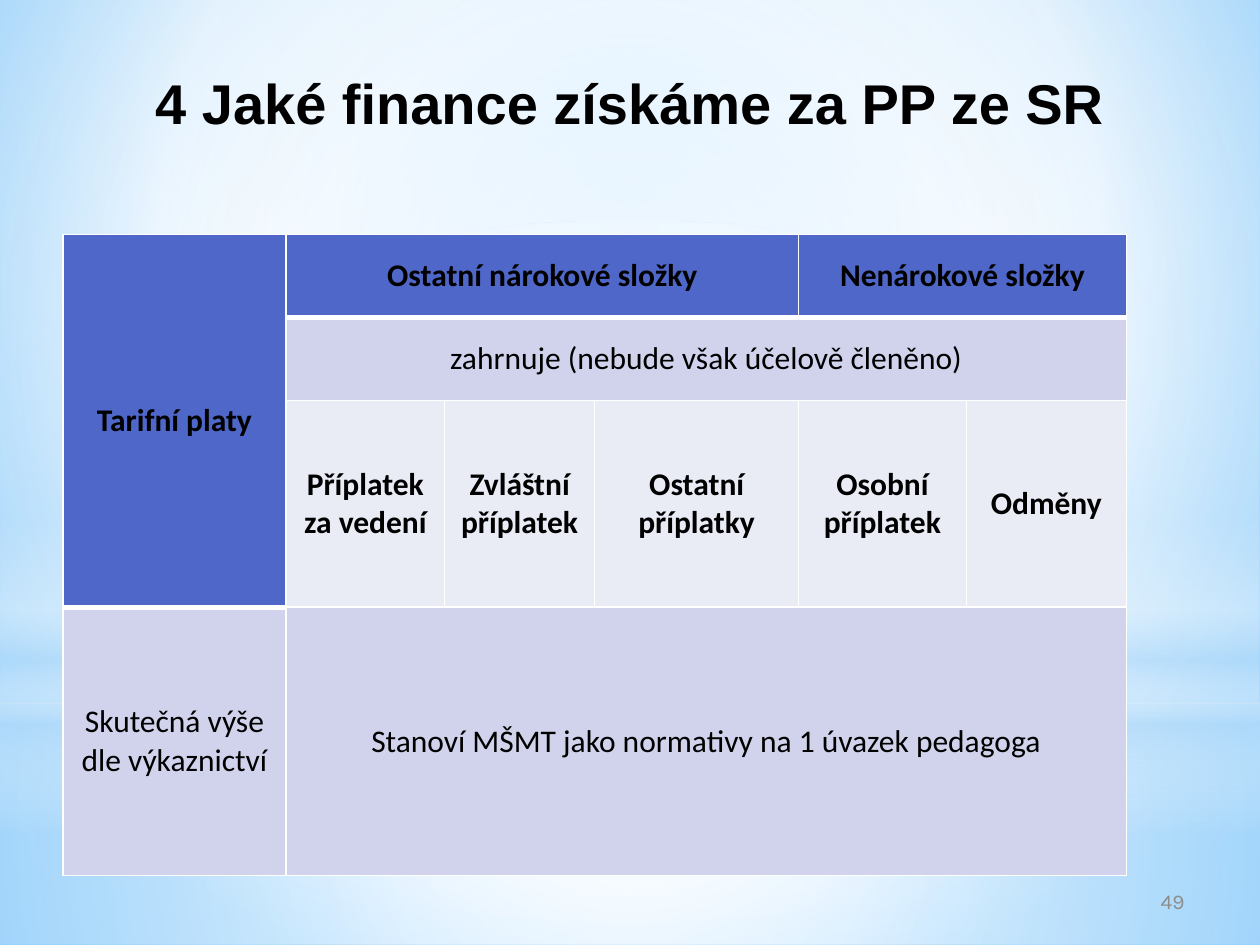
from lxml.etree import SubElement
from pptx import Presentation
from pptx.dml.color import RGBColor
from pptx.enum.shapes import MSO_SHAPE
from pptx.enum.text import MSO_ANCHOR, MSO_AUTO_SIZE, PP_ALIGN
from pptx.oxml.ns import qn
from pptx.util import Inches, Pt

COLUMN_WIDTHS = (1.77, 1.26, 1.19, 1.62, 1.33, 1.27)
ROW_HEIGHTS = (0.66, 0.66, 1.64, 2.13)
HEADER, BAND, LIGHT = "4E67C8", "D0D3EB", "E9EBF5"
CELLS = (
    (0, 0, 3, 1, "Tarifní platy", HEADER, True),
    (0, 1, 1, 3, "Ostatní nárokové složky", HEADER, True),
    (0, 4, 1, 2, "Nenárokové složky", HEADER, True),
    (1, 1, 1, 5, "zahrnuje (nebude však účelově členěno)", BAND, False),
    (2, 1, 1, 1, "Příplatek za vedení", LIGHT, True),
    (2, 2, 1, 1, "Zvláštní příplatek", LIGHT, True),
    (2, 3, 1, 1, "Ostatní příplatky", LIGHT, True),
    (2, 4, 1, 1, "Osobní příplatek", LIGHT, True),
    (2, 5, 1, 1, "Odměny", LIGHT, True),
    (3, 0, 1, 1, "Skutečná výše dle výkaznictví", BAND, False),
    (3, 1, 1, 5, "Stanoví MŠMT jako normativy na 1 úvazek pedagoga", BAND, False),
)
GLOWS = (
    (MSO_SHAPE.RECTANGLE, (0, 5.58, 10, 1.92), (50, 50, 50, 50),
     ((0, "FFFFFF", 91), (37, "FFFFFF", 76), (100, "B4DCFA", 79))),
    (MSO_SHAPE.RECTANGLE, (0, 0, 10, 5.58), (50, 50, 50, 50),
     ((0, "FFFFFF", 89), (48, "FFFFFF", 62), (100, "B4DCFA", 79))),
    (MSO_SHAPE.RECTANGLE, (0, 4.12, 10, 2.5), None,
     ((0, "FFFFFF", 0), (29, "FFFFFF", 30), (45, "B4DCFA", 40),
      (55, "FFFFFF", 26), (65, "B4DCFA", 60), (100, "FFFFFF", 0))),
    (MSO_SHAPE.OVAL, (0, 1.75, 10, 5.58), (50, 50, 50, 50),
     ((0, "FFFFFF", 100), (56, "FFFFFF", 0))),
)


def color(value):
    """Turn a hex string into a colour."""
    return RGBColor.from_string(value)


def style_text(paragraph, font_name, size, ink, align, bold=False):
    """Set the font and alignment of a paragraph."""
    paragraph.alignment = align
    font = paragraph.font
    font.name, font.size, font.bold = font_name, Pt(size), bold
    font.color.rgb = color(ink)


def set_gradient(fill, stops, focus=None):
    """Fill with a circular gradient around a focus, or a downward one."""
    fill.gradient()
    gradient = fill._fill._gradFill
    for child in list(gradient):
        gradient.remove(child)
    stop_list = SubElement(gradient, qn("a:gsLst"))
    for position, value, opacity in stops:
        stop = SubElement(stop_list, qn("a:gs"), pos=str(position * 1000))
        tint = SubElement(stop, qn("a:srgbClr"), val=value)
        SubElement(tint, qn("a:alpha"), val=str(opacity * 1000))
    if focus:
        circle = SubElement(gradient, qn("a:path"), path="circle")
        sides = {side: str(share * 1000) for side, share in zip("ltrb", focus)}
        SubElement(circle, qn("a:fillToRect"), **sides)
    else:
        SubElement(gradient, qn("a:lin"), ang="5400000", scaled="0")


def add_backdrop(slide):
    """Draw the sky background and its soft glows."""
    sky = ((0, "9ED5FF", 100), (60, "FFFFFF", 100), (100, "5BB9FF", 100))
    set_gradient(slide.background.fill, sky, (20, 10, 20, 60))
    for outline, box, focus, stops in GLOWS:
        glow = slide.shapes.add_shape(outline, *map(Inches, box))
        glow.shadow.inherit = False
        glow.line.fill.background()
        set_gradient(glow.fill, stops, focus)


def add_title(slide, box):
    """Place the title above the backdrop."""
    title = slide.shapes.title
    title.element.getparent().append(title.element)
    title.left, title.top, title.width, title.height = map(Inches, box)
    frame = title.text_frame
    frame.text = "4 Jaké finance získáme za PP ze SR"
    frame.auto_size = MSO_AUTO_SIZE.NONE
    frame.vertical_anchor = MSO_ANCHOR.TOP
    frame.margin_top = Inches(0.1)
    style_text(frame.paragraphs[0], "Arial", 32, "000000", PP_ALIGN.CENTER, True)


def add_page_number(slide, box):
    """Place the page number."""
    frame = slide.shapes.add_textbox(*map(Inches, box)).text_frame
    frame.word_wrap = True
    frame.vertical_anchor = MSO_ANCHOR.MIDDLE
    frame.text = "49"
    style_text(frame.paragraphs[0], "Karla", 12, "8C8C8C", PP_ALIGN.RIGHT)


def set_borders(cell, top, bottom):
    """Give a cell white borders."""
    properties = cell._tc.get_or_add_tcPr()
    for side, points in (("L", 1), ("R", 1), ("T", top), ("B", bottom)):
        line = SubElement(properties, qn(f"a:ln{side}"), w=str(Pt(points)))
        solid = SubElement(line, qn("a:solidFill"))
        SubElement(solid, qn("a:srgbClr"), val="FFFFFF")


def add_pay_table(slide, box):
    """Build the table of pay components."""
    table = slide.shapes.add_table(
        len(ROW_HEIGHTS), len(COLUMN_WIDTHS), *map(Inches, box)).table
    for column, width in zip(table.columns, COLUMN_WIDTHS):
        column.width = Inches(width)
    for row, height in zip(table.rows, ROW_HEIGHTS):
        row.height = Inches(height)
    for row, column, tall, wide, text, shade, bold in CELLS:
        cell = table.cell(row, column)
        if tall * wide > 1:
            cell.merge(table.cell(row + tall - 1, column + wide - 1))
        below_header = (row, column) == (3, 0) or row == 1
        for r in range(row, row + tall):
            for c in range(column, column + wide):
                part = table.cell(r, c)
                set_borders(part, 3 if below_header else 1, 3 if shade == HEADER else 1)
                part.fill.solid()
                part.fill.fore_color.rgb = color(shade)
        cell.text = text
        cell.vertical_anchor = MSO_ANCHOR.MIDDLE
        style_text(cell.text_frame.paragraphs[0], "Calibri", 18, "000000",
                   PP_ALIGN.CENTER, bold)


def main():
    """Build and save the slide."""
    deck = Presentation()
    deck.slide_width, deck.slide_height = Inches(10), Inches(7.5)
    slide = deck.slides.add_slide(deck.slide_layouts[5])
    add_backdrop(slide)
    add_title(slide, (0.5, 0.44, 9, 1.02))
    add_page_number(slide, (7.17, 6.95, 2.33, 0.4))
    add_pay_table(slide, (0.5, 1.86, 8.44, 5.09))
    deck.save("out.pptx")


if __name__ == "__main__":
    main()
